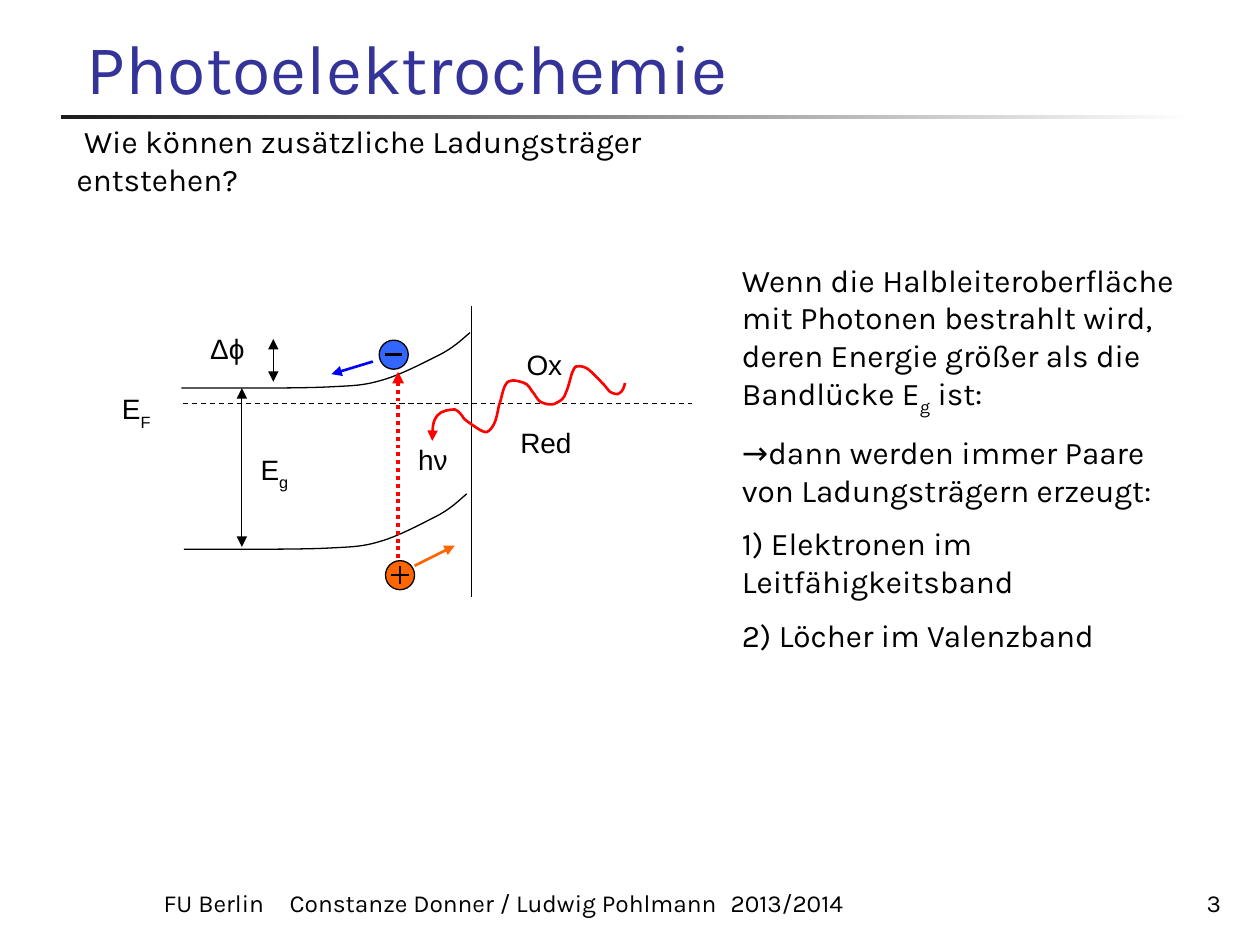
from typing import NamedTuple

from lxml import etree
from pptx import Presentation
from pptx.dml.color import RGBColor
from pptx.enum.dml import MSO_LINE
from pptx.enum.shapes import MSO_CONNECTOR, MSO_SHAPE
from pptx.enum.text import MSO_ANCHOR, PP_ALIGN
from pptx.oxml.ns import qn
from pptx.util import Pt

RECTANGLE, OVAL = MSO_SHAPE.RECTANGLE, MSO_SHAPE.OVAL
STRAIGHT = MSO_CONNECTOR.STRAIGHT
DASH, DOT = MSO_LINE.DASH, MSO_LINE.ROUND_DOT
TOP, MIDDLE, BOTTOM = MSO_ANCHOR.TOP, MSO_ANCHOR.MIDDLE, MSO_ANCHOR.BOTTOM
LEFT, RIGHT = PP_ALIGN.LEFT, PP_ALIGN.RIGHT
TEXT_FONT, DIAGRAM_FONT = "Karla", "Arial"
COLORS = {
    "title": "333399", "black": "000000", "white": "FFFFFF", "rule": "1C1C1C",
    "hole": "FF6600", "electron": "3366FF", "drift": "0000FF", "photon": "FF0000",
}


class Span(NamedTuple):
    text: str
    baseline: int = 0


class Label(NamedTuple):
    left: float
    top: float
    width: float
    height: float
    spans: list[Span]


class Line(NamedTuple):
    start: tuple[float, float]
    end: tuple[float, float]
    color: str = "black"
    weight: float = 0.75
    dash: object = None
    head: bool = False
    tail: bool = False


class Carrier(NamedTuple):
    left: float
    top: float
    color: str


def rgb(name: str) -> RGBColor:
    return RGBColor.from_string(COLORS[name])


def add_spans(para, spans: list[Span], size: float, font: str, color: str = "black") -> None:
    for span in spans:
        run = para.add_run()
        run.text = span.text
        run.font.size, run.font.name = Pt(size), font
        run.font.color.rgb = rgb(color)
        if span.baseline:
            run._r.get_or_add_rPr().set("baseline", str(span.baseline * 1000))


def add_text(page, frame: tuple, paragraphs: list, size: float, anchor, align=LEFT):
    box = page.shapes.add_textbox(*map(Pt, frame))
    box.text_frame.word_wrap = True
    box.text_frame.vertical_anchor = anchor
    for index, spans in enumerate(paragraphs):
        para = box.text_frame.add_paragraph() if index else box.text_frame.paragraphs[0]
        para.alignment = align
        if index:
            para.space_before = Pt(size / 2)
        add_spans(para, spans, size, TEXT_FONT)
    return box


def style_line(shape, color: str, weight: float, dash=None, head=False, tail=False) -> None:
    shape.line.color.rgb = rgb(color)
    shape.line.width = Pt(weight)
    if dash:
        shape.line.dash_style = dash
    outline = shape.line._get_or_add_ln()
    for wanted, tag in ((head, "a:headEnd"), (tail, "a:tailEnd")):
        if wanted:
            etree.SubElement(outline, qn(tag)).set("type", "triangle")


def add_line(page, line: Line) -> None:
    connector = page.shapes.add_connector(STRAIGHT, *map(Pt, line.start + line.end))
    style_line(connector, *line[2:])
    etree.SubElement(connector._element.spPr, qn("a:effectLst"))


def add_curve(page, points: list, color: str, weight: float, head: bool = False) -> None:
    """Draw a start point followed by cubic segments of three points each."""
    places = [(Pt(x), Pt(y)) for x, y in points]
    builder = page.shapes.build_freeform(*places[0])
    builder.add_line_segments(places[1:], close=False)
    curve = builder.convert_to_shape()
    curve.shadow.inherit = False
    curve.fill.background()
    style_line(curve, color, weight, head=head)
    steps = list(curve._element.iter(qn("a:lnTo")))
    for first in range(0, len(steps), 3):
        group = steps[first:first + 3]
        cubic = etree.Element(qn("a:cubicBezTo"))
        group[0].addprevious(cubic)
        for step in group:
            cubic.append(step[0])
            step.getparent().remove(step)


def add_label(page, label: Label) -> None:
    box = page.shapes.add_shape(RECTANGLE, *map(Pt, label[:4]))
    box.shadow.inherit = False
    box.fill.solid()
    box.fill.fore_color.rgb = rgb("white")
    box.line.fill.background()
    box.text_frame.vertical_anchor = TOP
    para = box.text_frame.paragraphs[0]
    para.alignment = LEFT
    add_spans(para, label.spans, 16, DIAGRAM_FONT)


def add_carrier(page, carrier: Carrier) -> None:
    circle = page.shapes.add_shape(OVAL, *map(Pt, (carrier.left, carrier.top, 16.6, 16.6)))
    circle.shadow.inherit = False
    circle.fill.solid()
    circle.fill.fore_color.rgb = rgb(carrier.color)
    style_line(circle, "black", 0.75)


# Band edge relative to its left end; both bands share it
BAND = [
    (0, 0), (9.4, 0), (18, 0), (32.4, 0), (46.8, 0), (72, 0), (85, -0.7),
    (98.6, -1.4), (103.7, -1.4), (113.8, -4.3), (124.6, -7.2), (138.2, -14.4),
    (146.9, -18.7), (155.5, -23), (159.8, -27.4), (164.9, -31.7),
]
BAND_PLACES = [(103.7, 221.8, 1), (105.1, 313.9, 0.98)]  # left, top, x scale
PHOTON = [
    (247, 252), (247, 244.1), (247.7, 240.5), (249.8, 237.6),
    (252, 234.7), (257, 234), (259.9, 234), (262.1, 234.7), (264.2, 237.6), (265, 239),
    (266.4, 240.5), (268.6, 241.9), (270.7, 243.4), (272.9, 244.8), (275.8, 247), (277.9, 247),
    (280.1, 246.2), (280.8, 244.8), (282.2, 242.6), (283.7, 239.8), (284.4, 235.4), (285.1, 231.8),
    (286.6, 228.2), (287.3, 222.5), (288.7, 220.3), (290.2, 217.4), (290.9, 218.2), (293, 217.4),
    (294.5, 217.4), (298.8, 218.2), (301, 219.6), (302.4, 220.3), (302.4, 221.8), (303.8, 223.2),
    (305.3, 224.6), (306.7, 228.2), (308.9, 229.7), (310.3, 230.4), (312.5, 231.1), (313.9, 231.1),
    (316.1, 231.1), (317.5, 231.1), (319, 229.7), (320.4, 229), (322.6, 227.5), (323.3, 224.6),
    (324.7, 221.8), (326.2, 215.3), (326.9, 213.1), (328.3, 211), (327.6, 210.2), (329, 209.5),
    (330.5, 209.5), (331.9, 208.8), (334.8, 210.2), (337.7, 211.7), (342.7, 217.4), (344.9, 219.6),
    (347, 221.8), (347, 222.5), (348.5, 223.9), (349.9, 224.6), (352.8, 226.1), (354.2, 224.6),
    (355.7, 223.9), (357.1, 220.3), (357.1, 218.9),
]
LABELS = [
    Label(293.8, 195.1, 41, 28, [Span("Ox")]),
    Label(290.2, 239.8, 51.8, 28, [Span("Red")]),
    Label(62.6, 220.3, 35.3, 28, [Span("E"), Span("F", -30)]),
    Label(141.8, 254.9, 35.3, 28, [Span("E"), Span("g", -30)]),
    Label(113, 185.8, 36.7, 29.5, [Span("Δϕ")]),
    Label(231.8, 249.1, 36.7, 29.5, [Span("hν")]),
]
CARRIERS = [Carrier(220.3, 320.4, "hole"), Carrier(216.7, 194.4, "electron")]
LINES = [
    Line((104.4, 230.4), (395.3, 230.4), dash=DASH),  # Fermi level
    Line((269.3, 175), (269.3, 341.3)),  # surface
    Line((138.2, 221.8), (138.2, 312.5), head=True, tail=True),  # band gap
    Line((156.2, 193.7), (156.2, 218.2), head=True, tail=True),  # band bending
    Line((228.6, 323.6), (228.6, 334), weight=1.5),  # plus sign
    Line((223.6, 328.7), (233.6, 328.7), weight=1.5),
    Line((220, 202.7), (230, 202.7), weight=1.5),  # minus sign
    Line((213.1, 206.6), (189.4, 213.8), "drift", 1.5, tail=True),
    Line((259.9, 311.8), (236.9, 323.3), "hole", 1.5, head=True),
    Line((227.5, 319), (227.5, 212.4), "photon", 2.25, DOT, tail=True),
]
EXPLANATION = [
    [Span("Wenn die Halbleiteroberfläche mit Photonen bestrahlt wird, deren Energie "
          "größer als die Bandlücke E"), Span("g", -25), Span(" ist:")],
    [Span("→dann werden immer Paare von Ladungsträgern erzeugt:")],
    [Span("1) Elektronen im Leitfähigkeitsband")],
    [Span("2) Löcher im Valenzband")],
]


def main() -> None:
    deck = Presentation()
    deck.slide_width, deck.slide_height = Pt(720), Pt(540)
    page = deck.slides.add_slide(deck.slide_layouts[5])

    # Title with fading rule
    title = page.shapes.title
    title.left, title.top, title.width, title.height = map(Pt, (42.5, 16.6, 661.7, 49))
    title.text_frame.vertical_anchor = BOTTOM
    title.text_frame.paragraphs[0].alignment = LEFT
    add_spans(title.text_frame.paragraphs[0], [Span("Photoelektrochemie")], 40, TEXT_FONT, "title")
    rule = page.shapes.add_shape(RECTANGLE, *map(Pt, (34.6, 65.8, 648, 2.2)))
    rule.shadow.inherit = False
    rule.line.fill.background()
    rule.fill.gradient()
    rule.fill.gradient_angle = 0
    for stop, name in zip(rule.fill.gradient_stops, ("rule", "white")):
        stop.color.rgb = rgb(name)

    # Footer, spaced by tab stops
    footer = add_text(page, (25.2, 491.8, 572.4, 36),
                      [[Span("FU Berlin\tConstanze Donner / Ludwig Pohlmann\t2013/2014")]], 14, BOTTOM)
    properties = footer.text_frame.paragraphs[0]._p.get_or_add_pPr()
    properties.set("marL", str(Pt(61.2)))
    properties.set("indent", "0")
    tabs = etree.SubElement(properties, qn("a:tabLst"))
    for position in (158.4, 432):
        etree.SubElement(tabs, qn("a:tab"), pos=str(Pt(position)), algn="l")
    add_text(page, (609.8, 491.8, 95, 36), [[Span("3")]], 14, BOTTOM, RIGHT)

    # Question and explanation
    add_text(page, (36.7, 77, 418.3, 28.8),
             [[Span(" Wie können zusätzliche Ladungsträger entstehen?")]], 18, MIDDLE)
    add_text(page, (416.9, 145.4, 277.9, 236.2), EXPLANATION, 18, TOP)

    # Band diagram
    for label in LABELS:
        add_label(page, label)
    for left, top, scale in BAND_PLACES:
        add_curve(page, [(left + x * scale, top + y) for x, y in BAND], "black", 0.75)
    for carrier in CARRIERS:
        add_carrier(page, carrier)
    for line in LINES:
        add_line(page, line)
    add_curve(page, PHOTON, "photon", 1.5, head=True)

    deck.save("out.pptx")


if __name__ == "__main__":
    main()
